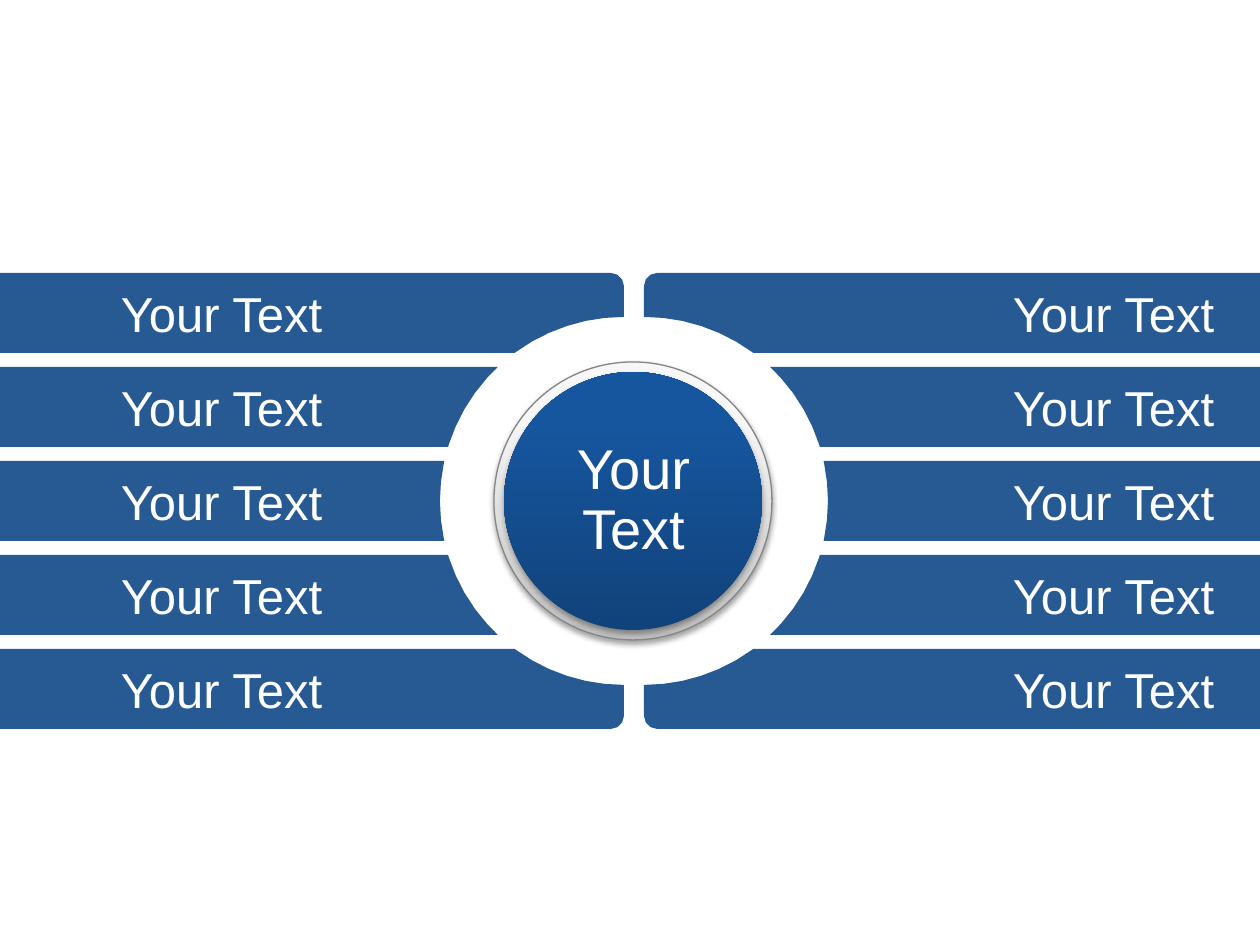
from dataclasses import dataclass
from math import cos, radians, sqrt

from pptx import Presentation
from pptx.dml.color import RGBColor
from pptx.enum.shapes import MSO_SHAPE
from pptx.enum.text import MSO_ANCHOR, PP_ALIGN
from pptx.oxml import parse_xml
from pptx.oxml.ns import nsdecls
from pptx.util import Pt

DONUT, OVAL = MSO_SHAPE.DONUT, MSO_SHAPE.OVAL
MIDDLE, CENTER = MSO_ANCHOR.MIDDLE, PP_ALIGN.CENTER
SCALE = 914400 / 126
ROWS, TOP, HIGH, STEP = 5, 273, 80, 94
BASE = TOP + (ROWS - 1) * STEP + HIGH
MID = (TOP + BASE) // 2
HOLE, ROUND = 184, 13


@dataclass(frozen=True)
class Theme:
    """Colours, font and type sizes of the slide."""
    bar: str = "275A93"
    text: str = "FFFFFF"
    rim: str = "858585"
    ring: tuple = ((0, "BEBEBE"), (80, "F7F7F7"), (100, "F8F8F8"))
    disc: tuple = ((0, "11427A"), (80, "16569E"), (100, "1457A1"))
    font: str = "Arial"
    label: int = 28
    hub: int = 32


def emu(px):
    """Turn px into EMU."""
    return round(px * SCALE)


def arc(mid, size, start, stop, step):
    """List the heights of evenly turned points on a circle."""
    return [round(mid - size * cos(radians(a)), 2) for a in range(start, stop + 1, step)]


def inset(y):
    """Give how far the inner edge is cut back at height y."""
    gap = max(0, ROUND - min(y - TOP, BASE - y))
    bend = ROUND - sqrt(ROUND ** 2 - gap ** 2)
    bite = sqrt(max(0, HOLE ** 2 - (y - MID) ** 2))
    return max(bend, bite)


HEIGHTS = (arc(TOP + ROUND, ROUND, 0, 90, 30) + arc(MID, HOLE, 0, 180, 6)
           + arc(BASE - ROUND, ROUND, 90, 180, 30))


def outline(top, edge, end):
    """List the corner points of one bar from its inner edge to its end."""
    sign = 1 if end > edge else -1
    base = top + HIGH
    rows = sorted({top, base, *(y for y in HEIGHTS if top < y < base)})
    near = [(edge + sign * inset(y), y) for y in rows]
    return [(emu(x), emu(y)) for x, y in near + [(end, base), (end, top)]]


class Deck:
    """Hold the theme and the current slide, and draw on it."""

    def __init__(self, slide, theme):
        """Keep the slide and its theme."""
        self.shapes = slide.shapes
        self.theme = theme

    def bars(self, edge, end):
        """Draw one side's bars as a single outline."""
        loops = [outline(TOP + i * STEP, edge, end) for i in range(ROWS)]
        pen = self.shapes.build_freeform(*loops[0][0], scale=1.0)
        for i, loop in enumerate(loops):
            if i:
                pen.move_to(*loop[0])
            pen.add_line_segments(loop[1:], close=True)
        shape = pen.convert_to_shape()
        shape.shadow.inherit = False
        shape.fill.solid()
        shape.fill.fore_color.rgb = RGBColor.from_string(self.theme.bar)
        shape.line.fill.background()

    def round(self, kind, left, top, size, stops, rim=None):
        """Draw a shaded round shape with a soft shadow."""
        shape = self.shapes.add_shape(kind, *map(emu, (left, top, size, size)))
        marks = "".join(f'<a:gs pos="{pos * 1000}"><a:srgbClr val="{tint}"/></a:gs>'
                        for pos, tint in stops)
        props = shape._element.spPr
        props.insert(2, parse_xml(
            f'<a:gradFill {nsdecls("a")} rotWithShape="1"><a:gsLst>{marks}</a:gsLst>'
            '<a:lin ang="16200000" scaled="0"/></a:gradFill>'))
        if rim:
            shape.line.color.rgb = RGBColor.from_string(rim)
            shape.line.width = Pt(0.75)
        else:
            shape.line.fill.background()
        props.append(parse_xml(
            f'<a:effectLst {nsdecls("a")}><a:outerShdw blurRad="40000" dist="23000" '
            'dir="5400000" rotWithShape="0"><a:srgbClr val="000000">'
            '<a:alpha val="35000"/></a:srgbClr></a:outerShdw></a:effectLst>'))
        return shape

    def text(self, words, left, top, wide, high, size, wrap=False):
        """Write centred words in a box."""
        box = self.shapes.add_textbox(*map(emu, (left, top, wide, high)))
        frame = box.text_frame
        frame.text = words
        frame.word_wrap = wrap
        frame.vertical_anchor = MIDDLE
        para = frame.paragraphs[0]
        para.alignment = CENTER
        font = para.runs[0].font
        font.name, font.size = self.theme.font, Pt(size)
        font.color.rgb = RGBColor.from_string(self.theme.text)
        return frame

    def hub(self):
        """Draw the ring, the disc and its words."""
        ring = self.round(DONUT, 494, 362, 278, self.theme.ring, self.theme.rim)
        ring.adjustments[0] = 0.08
        self.round(OVAL, 504, 372, 258, self.theme.disc)
        frame = self.text("Your Text", 542, 410, 183, 183, self.theme.hub, True)
        frame.margin_left = frame.margin_right = emu(3)
        frame.margin_top = frame.margin_bottom = emu(3)
        frame.paragraphs[0].line_spacing = 0.9

    def labels(self, left, wide):
        """Write one label on each bar of a side."""
        for i in range(ROWS):
            self.text("Your Text", left, TOP + 6 + i * STEP, wide, 68, self.theme.label)


def main():
    """Build the slide and save it."""
    show = Presentation()
    show.slide_width, show.slide_height = emu(1260), emu(945)
    deck = Deck(show.slides.add_slide(show.slide_layouts[6]), Theme())
    deck.bars(644, 1444)
    deck.hub()
    deck.labels(784, 659)
    deck.bars(624, -181)
    deck.labels(-181, 805)
    show.save("out.pptx")


if __name__ == "__main__":
    main()
